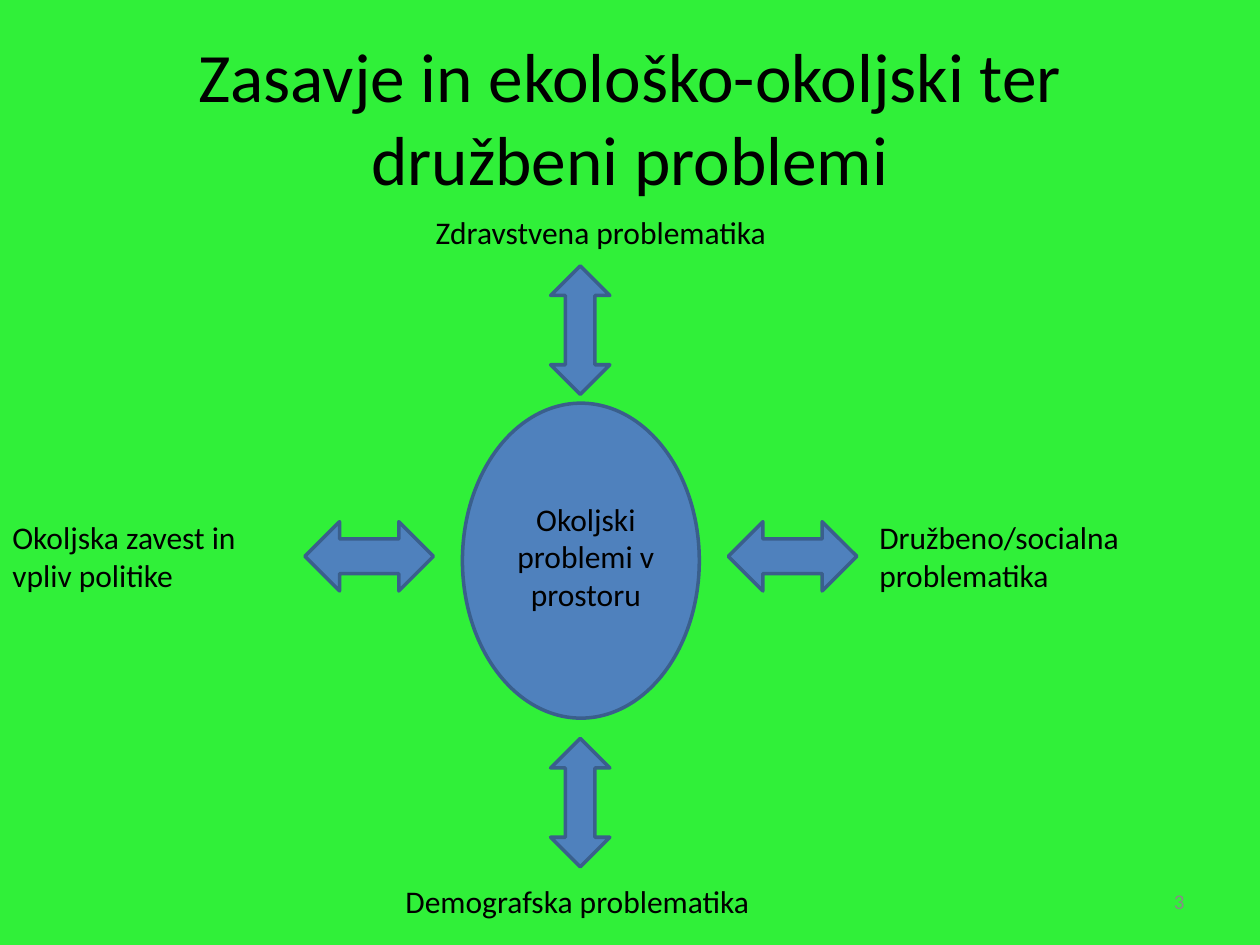
from pptx import Presentation
from pptx.dml.color import RGBColor
from pptx.enum.shapes import MSO_SHAPE
from pptx.enum.text import MSO_ANCHOR, PP_ALIGN
from pptx.util import Inches, Pt


def paint(color, code):
    color.rgb = RGBColor.from_string(code)


def write(frame, lines, size=18, align=PP_ALIGN.LEFT, code="000000"):
    for i, line in enumerate(lines):
        para = frame.paragraphs[0] if i == 0 else frame.add_paragraph()
        para.alignment = align
        run = para.add_run()
        run.text = line
        run.font.name = "Calibri"
        run.font.size = Pt(size)
        paint(run.font.color, code)


deck = Presentation()
deck.slide_width, deck.slide_height = Inches(10), Inches(7.5)
slide = deck.slides.add_slide(deck.slide_layouts[5])
back = slide.background.fill
back.solid()
paint(back.fore_color, "30F039")

title = slide.shapes.title
title.left, title.top = Inches(0.5), Inches(0.3)
title.width, title.height = Inches(9), Inches(1.25)
title.text_frame.word_wrap = True
title.text_frame.vertical_anchor = MSO_ANCHOR.MIDDLE
write(title.text_frame, ["Zasavje in ekološko-okoljski ter družbeni problemi"],
      39.6, PP_ALIGN.CENTER)

tall, wide = MSO_SHAPE.UP_DOWN_ARROW, MSO_SHAPE.LEFT_RIGHT_ARROW
figures = [
    (MSO_SHAPE.FLOWCHART_CONNECTOR, 3.67, 3.2, 1.88, 2.5),
    (tall, 4.37, 2.11, 0.47, 1.02),
    (tall, 4.37, 5.86, 0.47, 1.02),
    (wide, 5.78, 4.14, 1.02, 0.55),
    (wide, 2.42, 4.14, 1.02, 0.55),
]
for kind, *box in figures:
    shape = slide.shapes.add_shape(kind, *map(Inches, box))
    shape.shadow.inherit = False
    shape.fill.solid()
    paint(shape.fill.fore_color, "4F81BD")
    paint(shape.line.color, "3A5F8C")
    shape.line.width = Pt(2)

left, mid, right = PP_ALIGN.LEFT, PP_ALIGN.CENTER, PP_ALIGN.RIGHT
labels = [
    (["Okoljski problemi v prostoru"], 3.91, 3.91, 1.48, 1.01, True, 18, mid, "000000"),
    (["Zdravstvena problematika"], 3.36, 1.64, 3.05, 0.4, True, 18, left, "000000"),
    (["Družbeno/socialna", "problematika"], 6.88, 4.06, 2.19, 0.71, False, 18, left, "000000"),
    (["Demografska problematika"], 3.12, 6.95, 2.96, 0.4, False, 18, left, "000000"),
    (["Okoljska zavest in", "vpliv politike"], 0, 4.06, 2.81, 0.71, True, 18, left, "000000"),
    (["3"], 7.17, 6.95, 2.33, 0.4, True, 12, right, "898989"),
]
for lines, x, y, w, h, wrap, size, align, code in labels:
    frame = slide.shapes.add_textbox(*map(Inches, (x, y, w, h))).text_frame
    frame.word_wrap = wrap
    frame.vertical_anchor = MSO_ANCHOR.MIDDLE
    write(frame, lines, size, align, code)

deck.save("out.pptx")
